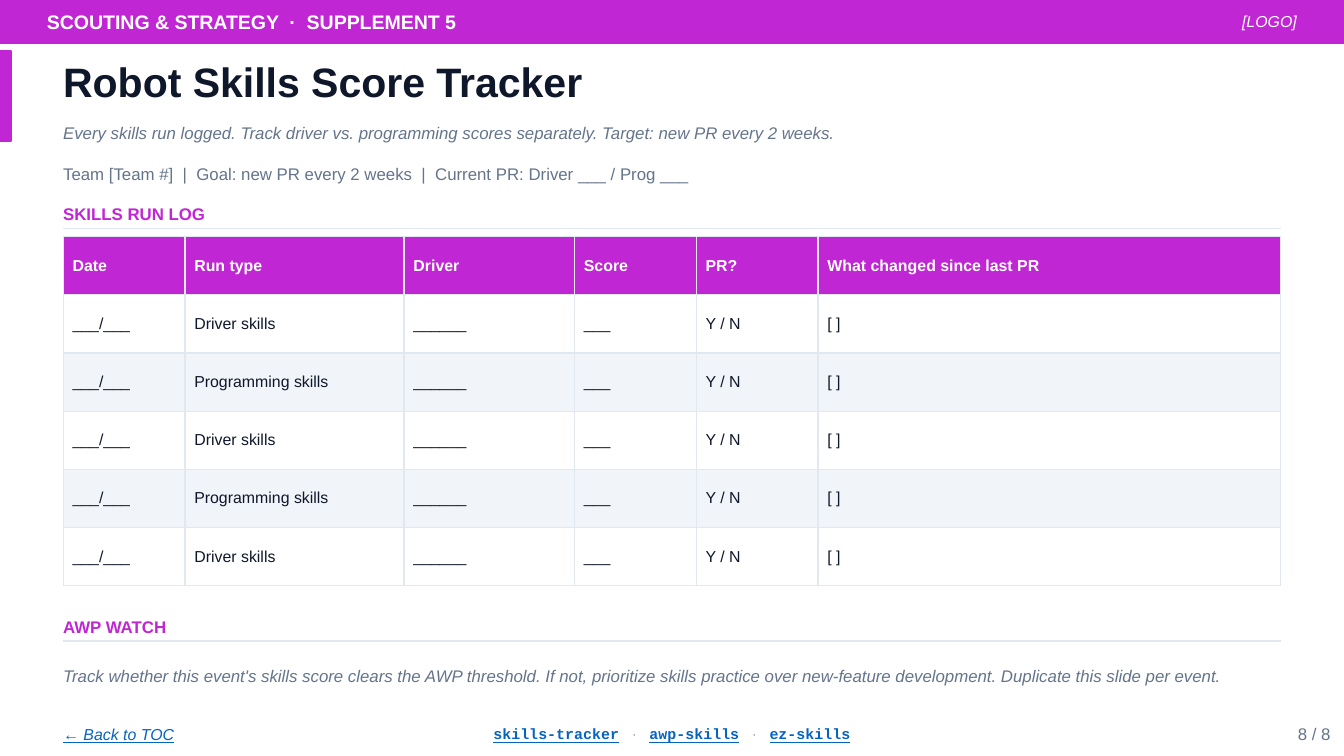
import pptx
import pptx.util
import pptx.dml.color
import pptx.enum.shapes
import pptx.enum.text
import pptx.oxml
import pptx.oxml.ns
import lxml.etree

Inches = pptx.util.Inches
Pt = pptx.util.Pt
ALIGN = pptx.enum.text.PP_ALIGN
MIDDLE = pptx.enum.text.MSO_ANCHOR.MIDDLE

# Palette
ACCENT, INK, GRAY, DOT = "C026D3", "0F172A", "64748B", "94A3B8"
LINK, RULE, BAND, WHITE = "0563C1", "E2E8F0", "F1F5F9", "FFFFFF"

# Shared text column
LEFT, WIDTH = 0.47, 9.06

HEAD = ["Date", "Run type", "Driver", "Score", "PR?",
        "What changed since last PR"]
SHARES = [0.1, 0.18, 0.14, 0.1, 0.1, 0.38]
RUNS = 5
TALL = 2.6


def color(code):
    return pptx.dml.color.RGBColor.from_string(code)


def add_run(para, text, size, tint, bold=False, italic=False,
            under=False, face="Arial"):
    run = para.add_run()
    run.text = text
    font = run.font
    font.name, font.size = face, Pt(size)
    font.bold, font.italic, font.underline = bold, italic, under
    font.color.rgb = color(tint)


def set_frame(shape, align=ALIGN.LEFT):
    """Make a tight, middle-anchored text frame and return its paragraph."""
    frame = shape.text_frame
    frame.word_wrap = True
    frame.auto_size = pptx.enum.text.MSO_AUTO_SIZE.NONE
    frame.vertical_anchor = MIDDLE
    frame.margin_left = frame.margin_right = 0
    frame.margin_top = frame.margin_bottom = 0
    para = frame.paragraphs[0]
    para.alignment = align
    return para


def add_box(slide, x, y, w, h, align=ALIGN.LEFT):
    box = slide.shapes.add_textbox(Inches(x), Inches(y), Inches(w), Inches(h))
    return set_frame(box, align)


def add_bar(slide, x, y, w, h):
    kind = pptx.enum.shapes.MSO_SHAPE.RECTANGLE
    bar = slide.shapes.add_shape(kind, Inches(x), Inches(y),
                                 Inches(w), Inches(h))
    bar.shadow.inherit = False
    bar.fill.solid()
    bar.fill.fore_color.rgb = color(ACCENT)
    bar.line.color.rgb = color(ACCENT)
    bar.line.width = Pt(1)


def add_section(slide, y, text):
    """Section label with a thin rule under it."""
    add_run(add_box(slide, LEFT, y, WIDTH, 0.22), text, 9, ACCENT, bold=True)
    low = Inches(y + 0.22)
    rule = slide.shapes.add_connector(
        pptx.enum.shapes.MSO_CONNECTOR.STRAIGHT,
        Inches(LEFT), low, Inches(LEFT + WIDTH), low)
    rule.line.color.rgb = color(RULE)
    rule.line.width = Pt(0.75)
    lxml.etree.SubElement(rule._element.spPr,
                          pptx.oxml.ns.qn("a:effectLst"))


def add_edges(cell):
    props = cell._tc.get_or_add_tcPr()
    for side in ("L", "R", "T", "B"):
        props.append(pptx.oxml.parse_xml(
            f'<a:ln{side} {pptx.oxml.ns.nsdecls("a")} w="{Pt(0.75)}">'
            f'<a:solidFill><a:srgbClr val="{RULE}"/></a:solidFill>'
            f'</a:ln{side}>'))


def fill_cell(cell, text, back, tint, bold, pad):
    add_edges(cell)
    cell.fill.solid()
    cell.fill.fore_color.rgb = color(back)
    cell.vertical_anchor = MIDDLE
    cell.margin_left = cell.margin_right = Inches(0.07)
    cell.margin_top = cell.margin_bottom = Inches(pad)
    add_run(cell.text_frame.paragraphs[0], text, 8.5, tint, bold=bold)


def add_log(slide):
    count = RUNS + 1
    table = slide.shapes.add_table(
        count, len(HEAD), Inches(LEFT), Inches(1.76),
        Inches(WIDTH), Inches(TALL)).table
    for col, share in zip(table.columns, SHARES):
        col.width = Inches(WIDTH * share)
    for row in table.rows:
        row.height = Inches(TALL / count)
    for c, text in enumerate(HEAD):
        fill_cell(table.cell(0, c), text, ACCENT, WHITE, True, 0.03)
    # Driver and programming runs alternate
    for r in range(1, count):
        odd = r % 2 == 1
        kind = "Driver skills" if odd else "Programming skills"
        line = ["___/___", kind, "______", "___", "Y / N", "[ ]"]
        for c, text in enumerate(line):
            fill_cell(table.cell(r, c), text, WHITE if odd else BAND,
                      INK, False, 0.04)


def add_header(slide):
    add_bar(slide, 0, 0, 10, 0.32)
    add_run(add_box(slide, 0.35, 0, 8.2, 0.32),
            "SCOUTING & STRATEGY  ·  SUPPLEMENT 5", 10.5, WHITE, bold=True)
    add_run(add_box(slide, 8.75, 0, 0.9, 0.32, ALIGN.RIGHT),
            "[LOGO]", 8.5, WHITE, italic=True)


def add_title(slide):
    add_bar(slide, 0, 0.38, 0.08, 0.67)
    title = slide.shapes.title
    title.left, title.top = Inches(LEFT), Inches(0.38)
    title.width, title.height = Inches(9.13), Inches(0.45)
    add_run(set_frame(title), "Robot Skills Score Tracker", 22, INK, bold=True)


def add_footer(slide):
    top, high = 5.32, 0.28
    add_run(add_box(slide, LEFT, top, 1.6, high),
            "← Back to TOC", 8.5, LINK, italic=True, under=True)
    tags = add_box(slide, 2.2, top, 5.6, high, ALIGN.CENTER)
    for i, tag in enumerate(["skills-tracker", "awp-skills", "ez-skills"]):
        if i:
            add_run(tags, "   ·   ", 8, DOT)
        add_run(tags, tag, 8, LINK, bold=True, under=True, face="Courier New")
    add_run(add_box(slide, 9.1, top, 0.8, high, ALIGN.RIGHT),
            "8 / 8", 9, GRAY)


def main():
    # Widescreen 16:9
    deck = pptx.Presentation()
    deck.slide_width = Inches(10)
    deck.slide_height = Inches(10 * 9 / 16)
    slide = deck.slides.add_slide(deck.slide_layouts[5])

    add_header(slide)
    add_title(slide)
    add_run(add_box(slide, LEFT, 0.88, 9.13, 0.22),
            "Every skills run logged. Track driver vs. programming scores "
            "separately. Target: new PR every 2 weeks.", 9, GRAY, italic=True)
    add_run(add_box(slide, LEFT, 1.18, WIDTH, 0.22),
            "Team [Team #]  |  Goal: new PR every 2 weeks  |  "
            "Current PR: Driver ___ / Prog ___", 9, GRAY)

    # Run log
    add_section(slide, 1.48, "SKILLS RUN LOG")
    add_log(slide)

    # Threshold note
    add_section(slide, 4.55, "AWP WATCH")
    add_run(add_box(slide, LEFT, 4.8, WIDTH, 0.45),
            "Track whether this event's skills score clears the AWP "
            "threshold. If not, prioritize skills practice over new-feature "
            "development. Duplicate this slide per event.",
            9, GRAY, italic=True)

    add_footer(slide)
    deck.save("out.pptx")


if __name__ == "__main__":
    main()
